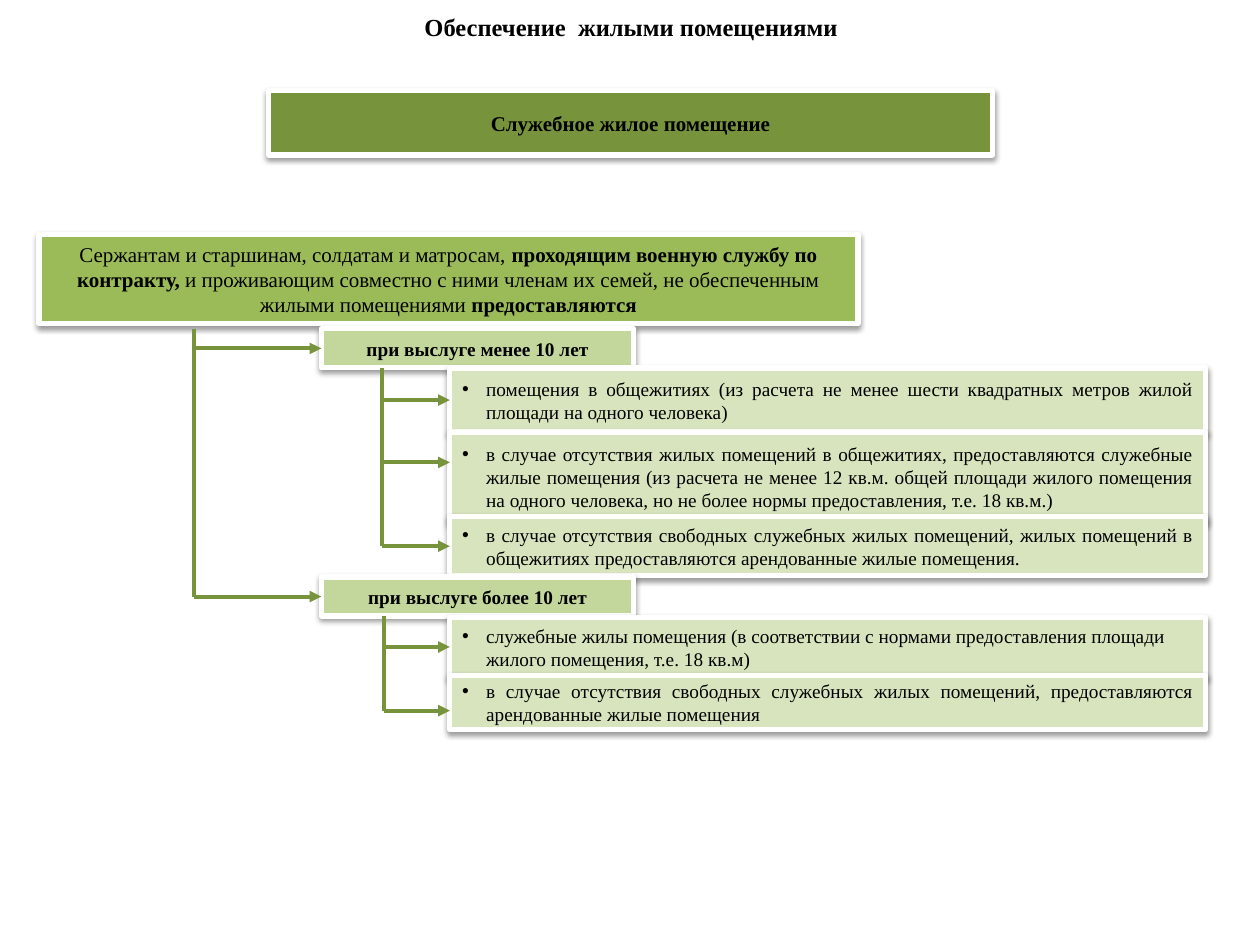
from lxml import etree
from pptx import Presentation
from pptx.dml.color import RGBColor
from pptx.enum import shapes, text
from pptx.oxml.ns import qn
from pptx.util import Inches, Pt

BLACK = RGBColor(0x00, 0x00, 0x00)
WHITE = RGBColor(0xFF, 0xFF, 0xFF)
DARK = RGBColor(0x77, 0x93, 0x3C)
GREEN = RGBColor(0x9B, 0xBB, 0x59)
LIGHT = RGBColor(0xC3, 0xD6, 0x9B)
PALE = RGBColor(0xD7, 0xE4, 0xBD)
FONT = "Times New Roman"
CENTER, JUSTIFY, LEFT = text.PP_ALIGN.CENTER, text.PP_ALIGN.JUSTIFY, text.PP_ALIGN.LEFT

# Text runs are (text, bold).
TITLE = [("Обеспечение  жилыми помещениями", True)]
HEADING = [("Служебное жилое помещение", True)]
RECIPIENTS = [
    ("Сержантам и старшинам, солдатам и матросам, ", False),
    ("проходящим военную службу по контракту, ", True),
    ("и проживающим совместно с ними членам их семей, не обеспеченным "
     "жилыми помещениями ", False),
    ("предоставляются", True),
]
# Options are (top, height, arrow height or None for the middle, alignment, text).
TERMS = [
    {"label": "при выслуге менее 10 лет", "top": 2.61, "trunk": 3.03, "options": [
        (2.92, 0.51, None, JUSTIFY,
         "помещения в общежитиях (из расчета не менее шести квадратных метров "
         "жилой площади на одного человека)"),
        (3.43, 0.71, 3.67, JUSTIFY,
         "в случае отсутствия жилых помещений в общежитиях, предоставляются "
         "служебные жилые помещения (из расчета не менее 12 кв.м. общей площади "
         "жилого помещения на одного человека, но не более нормы предоставления, "
         "т.е. 18 кв.м.)"),
        (4.10, 0.47, None, JUSTIFY,
         "в случае отсутствия свободных служебных жилых помещений, жилых помещений "
         "в общежитиях предоставляются арендованные жилые помещения."),
    ]},
    {"label": "при выслуге более 10 лет", "top": 4.58, "trunk": 3.05, "options": [
        (4.90, 0.47, None, LEFT,
         "служебные жилы помещения (в соответствии с нормами предоставления площади "
         "жилого помещения, т.е. 18 кв.м)"),
        (5.36, 0.43, 5.64, JUSTIFY,
         "в случае отсутствия свободных служебных жилых помещений, предоставляются "
         "арендованные жилые помещения"),
    ]},
]
TERM_LEFT, TERM_WIDTH, TERM_HEIGHT = 2.55, 2.48, 0.31
OPTION_LEFT, OPTION_WIDTH = 3.57, 6
MAIN_TRUNK, MAIN_TRUNK_TOP = 1.54, 2.61

prs = Presentation()
prs.slide_width, prs.slide_height = Inches(10), Inches(7.5)
slide = prs.slides.add_slide(prs.slide_layouts[6])


def write(paragraph, runs, size):
    for words, bold in runs:
        run = paragraph.add_run()
        run.text = words
        run.font.name, run.font.size, run.font.bold = FONT, Pt(size), bold
        run.font.color.rgb = BLACK


def add_soft_shadow(box):
    effects = etree.SubElement(box._element.spPr, qn("a:effectLst"))
    shadow = etree.SubElement(effects, qn("a:outerShdw"), blurRad=str(Pt(3.1)),
                              dist=str(Pt(1.6)), dir="5400000", rotWithShape="0")
    color = etree.SubElement(shadow, qn("a:srgbClr"), val="000000")
    etree.SubElement(color, qn("a:alpha"), val="38000")


def add_box(left, top, width, height, fill, runs, size, align=CENTER):
    box = slide.shapes.add_shape(shapes.MSO_SHAPE.RECTANGLE, Inches(left), Inches(top),
                                 Inches(width), Inches(height))
    box.fill.solid()
    box.fill.fore_color.rgb = fill
    box.line.color.rgb, box.line.width = WHITE, Pt(3)
    add_soft_shadow(box)
    box.text_frame.vertical_anchor = text.MSO_ANCHOR.MIDDLE
    paragraph = box.text_frame.paragraphs[0]
    paragraph.alignment = align
    write(paragraph, runs, size)
    return box


def add_bullet(box):
    properties = box.text_frame.paragraphs[0]._p.get_or_add_pPr()
    properties.set("marL", str(Inches(0.19)))
    properties.set("indent", str(-Inches(0.19)))
    etree.SubElement(properties, qn("a:buFont"), typeface="Arial")
    etree.SubElement(properties, qn("a:buChar"), char="•")


def add_line(x1, y1, x2, y2):
    line = slide.shapes.add_connector(shapes.MSO_CONNECTOR.STRAIGHT, Inches(x1),
                                      Inches(y1), Inches(x2), Inches(y2))
    line.line.color.rgb, line.line.width = DARK, Pt(2.25)
    etree.SubElement(line._element.spPr, qn("a:effectLst"))
    return line


def add_branches(trunk, trunk_top, targets):
    """Draw a vertical trunk with an arrow to each (box, height or None)."""
    heights = [y or (box.top + box.height / 2) / Inches(1) for box, y in targets]
    add_line(trunk, trunk_top, trunk, heights[-1])
    for (box, fixed), y in zip(targets, heights):
        arrow = add_line(trunk, y, box.left / Inches(1), y)
        if fixed is None:
            arrow.end_connect(box, 1)
        etree.SubElement(arrow.line._get_or_add_ln(), qn("a:tailEnd"), type="triangle")


title = slide.shapes.add_textbox(Inches(3.27), Inches(0.05), Inches(3.52), Inches(0.34))
title.text_frame.word_wrap = False
title.text_frame.auto_size = text.MSO_AUTO_SIZE.SHAPE_TO_FIT_TEXT
write(title.text_frame.paragraphs[0], TITLE, 14)

add_box(2.13, 0.72, 5.75, 0.51, DARK, HEADING, 12)
add_box(0.31, 1.86, 6.5, 0.71, GREEN, RECIPIENTS, 12)

term_targets, option_targets = [], []
for term in TERMS:
    term_box = add_box(TERM_LEFT, term["top"], TERM_WIDTH, TERM_HEIGHT, LIGHT,
                       [(term["label"], True)], 11)
    term_targets.append((term_box, None))
    targets = []
    for top, height, arrow_y, align, words in term["options"]:
        option_box = add_box(OPTION_LEFT, top, OPTION_WIDTH, height, PALE,
                             [(words, False)], 11, align)
        add_bullet(option_box)
        targets.append((option_box, arrow_y))
    option_targets.append(targets)

add_branches(MAIN_TRUNK, MAIN_TRUNK_TOP, term_targets)
for term, targets in zip(TERMS, option_targets):
    add_branches(term["trunk"], term["top"] + TERM_HEIGHT, targets)

prs.save("out.pptx")
